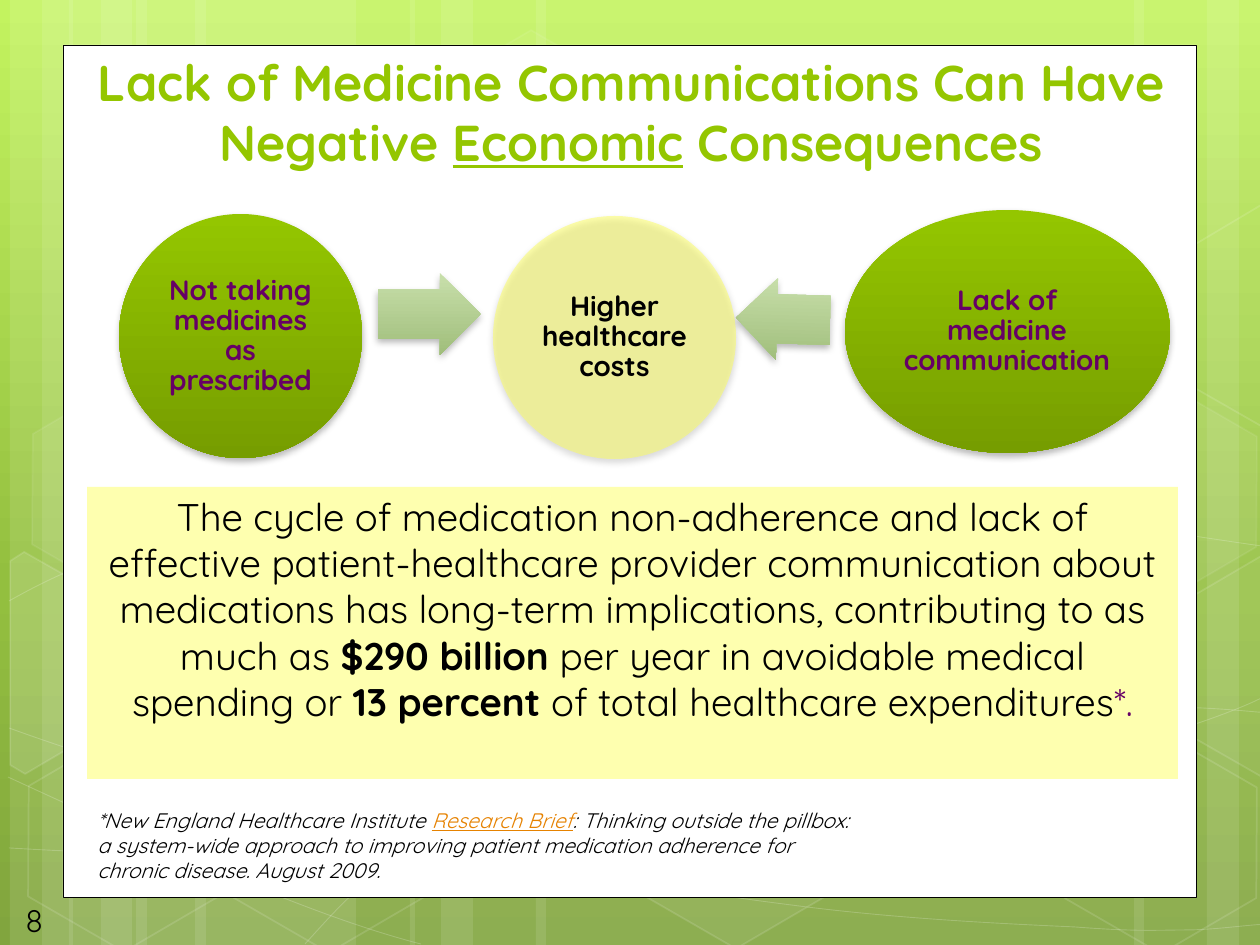
import copy
import math

import pptx
import pptx.dml.color
import pptx.enum.shapes
import pptx.enum.text
import pptx.oxml
import pptx.oxml.ns
import pptx.util
from lxml import etree

PX = 914400 / 126
KIND = pptx.enum.shapes.MSO_SHAPE
ALIGN = pptx.enum.text.PP_ALIGN
ANCHOR = pptx.enum.text.MSO_ANCHOR
qn = pptx.oxml.ns.qn
FONT = "Quicksand"
WHITE, BLACK, LIME, PURPLE, YELLOW = "FFFFFF", "000000", "94C600", "660066", "FDFF5C"


def paint(fill, *colours, alpha=100):
    if not colours:
        fill.background()
        return
    if len(colours) == 1:
        fill.solid()
        fill.fore_color.rgb = pptx.dml.color.RGBColor.from_string(colours[0])
        if alpha < 100:
            colour = next(fill._xPr.iter(qn("a:srgbClr")))
            etree.SubElement(colour, qn("a:alpha"), val=str(alpha * 1000))
        return
    fill.gradient()
    fill.gradient_angle = 270
    stops = next(fill._xPr.iter(qn("a:gsLst")))
    for _ in colours[2:]:
        stops.insert(1, copy.deepcopy(stops[0]))
    positions = (0, 0.62, 1) if len(colours) == 3 else (0, 1)
    for stop, colour, position in zip(fill.gradient_stops, colours, positions):
        stop.color.rgb = pptx.dml.color.RGBColor.from_string(colour)
        stop.position = position


def write(box, size, runs, align=ALIGN.LEFT, anchor=ANCHOR.TOP, inset=None, spacing=None):
    frame = box.text_frame
    frame.word_wrap = True
    frame.vertical_anchor = anchor
    if inset is not None:
        for side in ("left", "top", "right", "bottom"):
            setattr(frame, f"margin_{side}", round(inset * PX))
    para = frame.paragraphs[0]
    para.alignment = align
    para.line_spacing = spacing
    for text, colour, styles in runs:
        span = para.add_run()
        span.text = text
        paint(span.font.fill, colour)
        values = {"name": FONT, "size": pptx.util.Pt(size), **styles}
        for name, value in values.items():
            setattr(span.font, name, value)


deck = pptx.Presentation()
deck.slide_width = round(1260 * PX)
deck.slide_height = round(945 * PX)
page = deck.slides.add_slide(deck.slide_layouts[6])
paint(page.background.fill, "C3F35F", "93BF3F", "81A53E")

stripes = [
    (136, 220), (10, 63), (42, 105), (195, 220), (69, 63), (101, 105),
    (924, 220), (1207, 63), (1134, 105), (536, 388), (410, 63), (441, 105),
]
for left, width in stripes:
    stripe = page.shapes.add_shape(
        KIND.RECTANGLE, *[round(v * PX) for v in (left, 0, width, 945)])
    stripe.shadow.inherit = False
    paint(stripe.fill, WHITE, alpha=10)
    paint(stripe.line.fill)

curves = [
    [(9, 848), (77, 852), (145, 855), (239, 854), (334, 853), (451, 850), (577, 838),
     (703, 825), (882, 801), (998, 777), (1113, 753), (1231, 716), (1269, 694)],
    [(9, 601), (45, 581), (82, 562), (152, 543), (224, 524), (326, 496), (437, 488),
     (549, 479), (685, 478), (824, 488), (962, 498), (1193, 537), (1269, 547)],
    [(8, 777), (160, 847), (311, 916), (421, 944)],
    [(9, 728), (48, 742), (88, 756), (161, 776), (234, 795), (344, 827), (450, 848),
     (554, 869), (687, 892), (791, 905), (896, 919), (1008, 924), (1075, 927),
     (1140, 932), (1158, 930), (1191, 930), (1223, 929), (1246, 925), (1269, 924)],
    [(305, 944), (328, 919), (350, 893), (381, 871), (411, 848), (454, 823), (489, 805),
     (524, 788), (546, 780), (592, 767), (638, 755), (722, 737), (766, 728),
     (811, 719), (818, 719), (857, 717), (896, 713), (958, 709), (1000, 708),
     (1045, 707), (1116, 708), (1116, 708), (1144, 708), (1173, 708), (1201, 708),
     (1223, 709), (1245, 711), (1256, 712), (1268, 713), (1264, 712), (1268, 713)],
]
cut_hexagons = [
    ([(10, 561), (24, 552), (121, 607), (120, 718), (25, 774), (10, 765)], (45, 674), 10),
    ([(1167, 611), (1261, 556), (1271, 562), (1271, 772), (1263, 777), (1167, 722)], (1241, 655), 4),
    ([(1167, 261), (1261, 205), (1272, 212), (1271, 422), (1263, 427), (1167, 372)], (1241, 304), 0),
]
outlines = [(points, False, 0, 0.5, 20, 0) for points in curves]
cos, sin = math.cos(math.radians(30)), math.sin(math.radians(30))
for points, (middle, centre), alpha in cut_hexagons:
    upright = [(middle + (x - middle) * cos + (y - centre) * sin,
                centre - (x - middle) * sin + (y - centre) * cos) for x, y in points]
    outlines.append((upright, True, alpha, 1, 12, 30))
for points, closed, alpha, weight, line_alpha, turn in outlines:
    corners = [(round(x * PX), round(y * PX)) for x, y in points]
    builder = page.shapes.build_freeform(*corners[0], scale=1)
    builder.add_line_segments(corners[1:], close=closed)
    outline = builder.convert_to_shape()
    outline.rotation = turn
    if not closed:
        segments = list(outline._element.iter(qn("a:lnTo")))
        for first in range(0, len(segments), 3):
            bend = etree.SubElement(segments[first].getparent(), qn("a:cubicBezTo"))
            for segment in segments[first:first + 3]:
                bend.append(segment[0])
                segment.getparent().remove(segment)
    outline.shadow.inherit = False
    paint(outline.fill, *[WHITE] * bool(alpha), alpha=alpha)
    paint(outline.line.fill, WHITE, alpha=line_alpha)
    outline.line.width = pptx.util.Pt(weight)

hexagons = [
    (421, 45, 4, 8), (626, 742, 6, 12), (14, 745, 0, 12), (18, 393, 7, 8),
    (219, 746, 0, 12), (949, 571, 10, 12), (1051, 747, 0, 12), (1051, 396, 7, 8),
]
for left, top, alpha, line_alpha in hexagons:
    hexagon = page.shapes.add_shape(
        KIND.HEXAGON, *[round(v * PX) for v in (left, top, 220, 192)])
    hexagon.adjustments[0] = 0.285
    hexagon.rotation = 30
    hexagon.shadow.inherit = False
    paint(hexagon.fill, *[WHITE] * bool(alpha), alpha=alpha)
    paint(hexagon.line.fill, WHITE, alpha=line_alpha)
    hexagon.line.width = pptx.util.Pt(1)

panel = page.shapes.add_shape(KIND.RECTANGLE, *[round(v * PX) for v in (63, 45, 1134, 853)])
panel.shadow.inherit = False
paint(panel.fill, WHITE)
paint(panel.line.fill, BLACK)
panel.line.width = pptx.util.Pt(0.5)

greens, pales = (LIME, "769D00"), ("C8DFAB", "A0BE7B")
diagram = [
    (KIND.OVAL, (119, 214, 243, 244), greens, 100, 0),
    (KIND.LEFT_ARROW, (736, 278, 94, 82), pales, 100, 1.6),
    (KIND.OVAL, (845, 210, 325, 243), greens, 100, 0),
    (KIND.OVAL, (493, 216, 243, 243), (YELLOW,), 51, 0),
    (KIND.RIGHT_ARROW, (378, 273, 103, 82), pales, 100, 0),
]
for kind, place, colours, alpha, turn in diagram:
    part = page.shapes.add_shape(kind, *[round(v * PX) for v in place])
    part.rotation = turn
    if kind != KIND.OVAL:
        part.adjustments[0] = 0.6
    paint(part.fill, *colours, alpha=alpha)
    paint(part.line.fill)
    part.shadow.inherit = False
    effects = part._element.spPr.find(qn("a:effectLst"))
    shadow = etree.SubElement(effects, qn("a:outerShdw"), blurRad="50800", dist="25400",
                              dir="5400000", rotWithShape="0")
    shade = etree.SubElement(shadow, qn("a:srgbClr"), val=BLACK)
    etree.SubElement(shade, qn("a:alpha"), val="28000")

bold, italic, underlined = {"bold": True}, {"italic": True}, {"underline": True}
centred = {"align": ALIGN.CENTER}
label = {**centred, "anchor": ANCHOR.MIDDLE, "inset": 2, "spacing": 0.9}
texts = [
    ((65, 56, 1133, 122), 28.8, [
        ("Lack of Medicine Communications Can Have Negative ", LIME, bold),
        ("Economic", LIME, {**bold, **underlined}),
        (" Consequences", LIME, bold)], {**centred, "anchor": ANCHOR.BOTTOM}),
    ((13, 895, 184, 50), 18, [("8", BLACK, {})], {}),
    ((85, 801, 789, 89), 12, [
        ("*New England Healthcare Institute ", BLACK, italic),
        ("Research Brief", "E68200", {**italic, **underlined}),
        (": Thinking outside the pillbox: a system-wide approach to improving patient "
         "medication adherence for chronic disease. August 2009.", BLACK, italic)], {}),
    ((154, 250, 173, 173), 16, [("Not taking medicines as prescribed", PURPLE, bold)], label),
    ((892, 245, 230, 173), 16, [("Lack of medicine communication", PURPLE, bold)], label),
    ((528, 251, 173, 173), 16, [("Higher healthcare costs", BLACK, bold)], label),
]
for place, size, runs, layout in texts:
    box = page.shapes.add_textbox(*[round(v * PX) for v in place])
    write(box, size, runs, **layout)

message = page.shapes.add_shape(KIND.RECTANGLE, *[round(v * PX) for v in (87, 487, 1091, 292)])
message.shadow.inherit = False
paint(message.fill, YELLOW, alpha=49)
paint(message.line.fill)
write(message, 22, [
    ("The cycle of medication non-adherence and lack of effective patient-healthcare provider "
     "communication about medications has long-term implications, contributing to as much as ",
     BLACK, {}),
    ("$290 billion ", BLACK, bold),
    ("per year in avoidable medical spending or ", BLACK, {}),
    ("13 percent ", BLACK, bold),
    ("of total healthcare expenditures", BLACK, {}),
    ("*.", PURPLE, {})], **centred)

deck.save("out.pptx")
